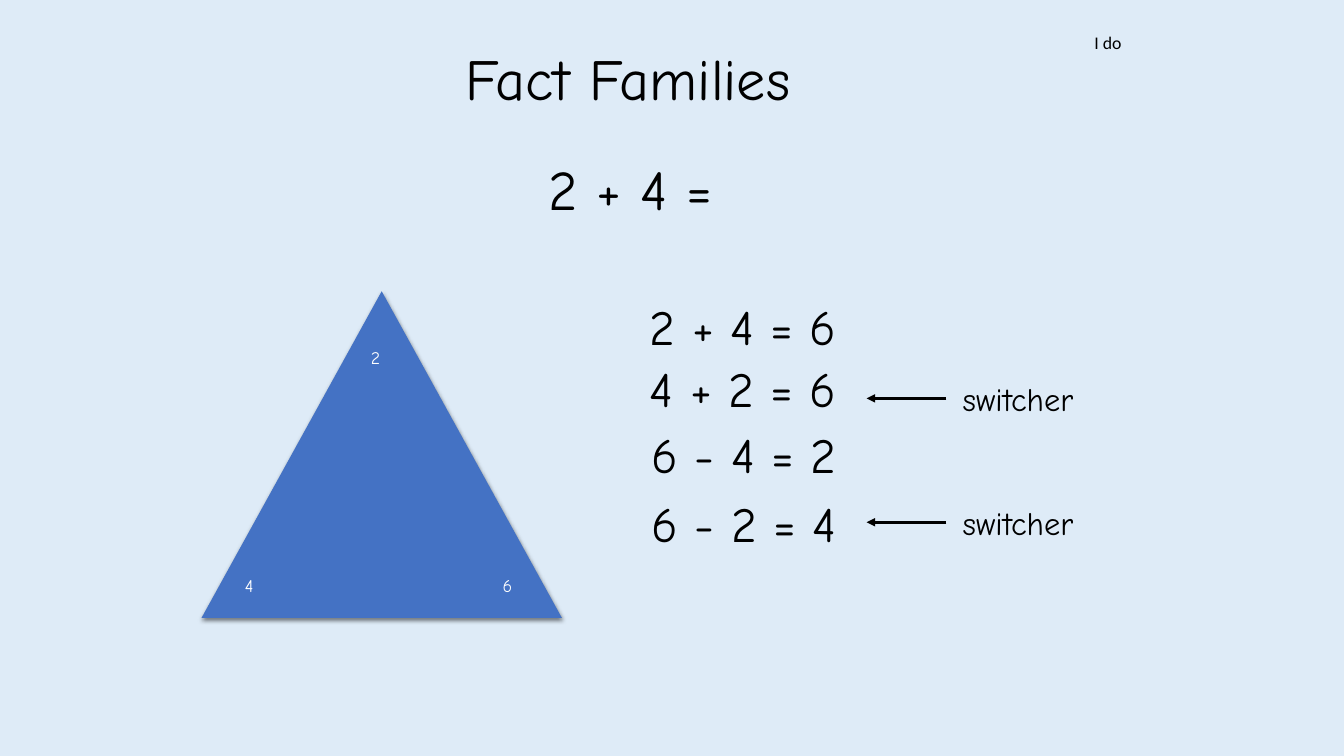
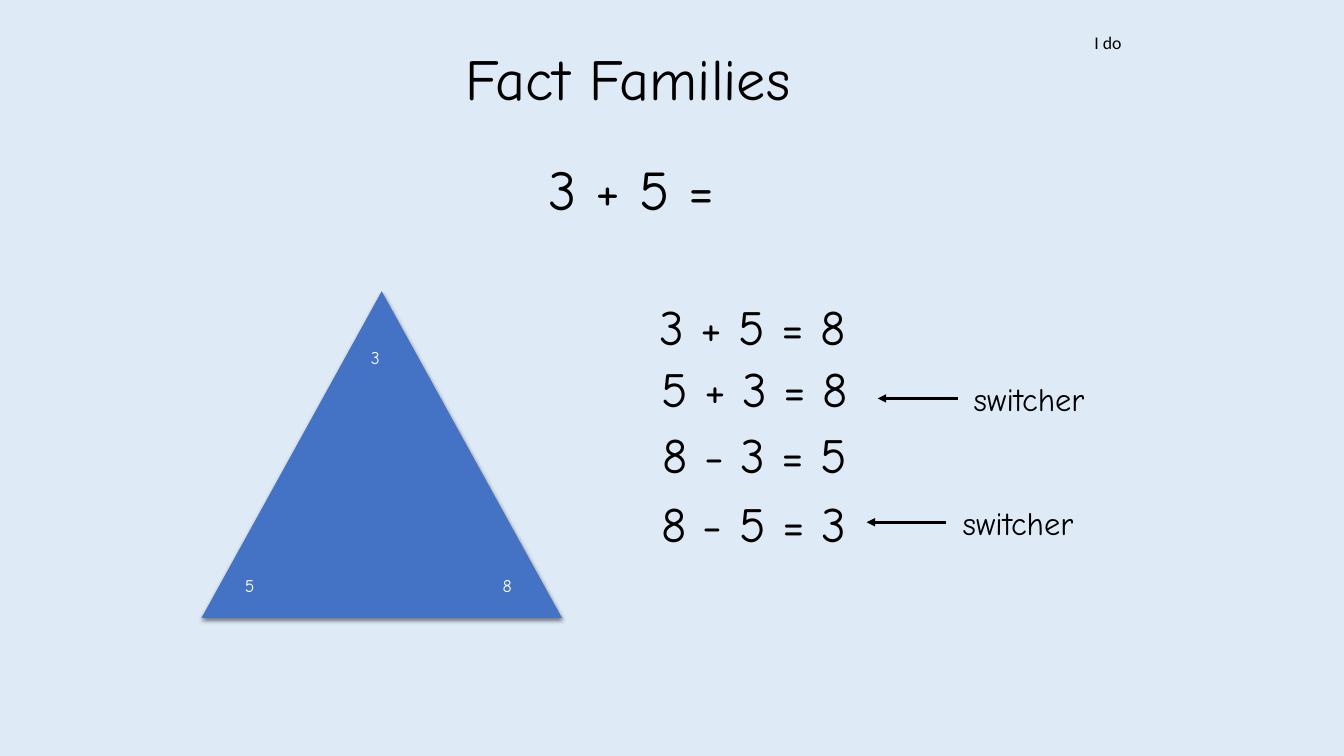
from pptx import Presentation
from pptx.dml.color import RGBColor
from pptx.enum.shapes import MSO_CONNECTOR, MSO_SHAPE
from pptx.enum.text import MSO_ANCHOR
from pptx.oxml import parse_xml
from pptx.oxml.ns import nsdecls, qn
from pptx.util import Cm, Pt

# Shared look
SKY, BLUE, BLACK, WHITE = "DEEBF7", "4472C4", "000000", "FFFFFF"
HAND, PLAIN = "Comic Neue", "Calibri"
TITLE = {"size": 41.5}
SUM = {"size": 40.1}
EQUATION = {"size": 35.2}
LABEL = {"size": 23.2}
CORNER = {"size": 12.7, "color": WHITE}
CUE = {"size": 12.7, "name": PLAIN}

# Shared places, in cm
CORNER_SPOTS = [(9.25, 8.64), (6.07, 14.38), (12.57, 14.38)]
EQUATION_TOPS = [7.37, 8.92, 10.58, 12.32]
SWITCHER_TOPS = [9.45, 12.57]
SWITCHER_LEFT = 21.84

# Corners run top, left, right; each equation has its left edge
FAMILIES = [
    {"sum": "2 + 4 =", "corners": "246", "shifts": [0, 0],
     "equations": [("2 + 4 = 6", 16.28), ("4 + 2 = 6", 16.28),
                   ("6 - 4 = 2", 16.33), ("6 - 2 = 4", 16.33)]},
    {"sum": "3 + 5 =", "corners": "358", "shifts": [0.28, 0],
     "equations": [("3 + 5 = 8", 16.51), ("5 + 3 = 8", 16.56),
                   ("8 - 3 = 5", 16.59), ("8 - 5 = 3", 16.56)]},
]


def rgb(value):
    return RGBColor.from_string(value)


def add_text(page, text, left, top, width, height, style):
    box = page.shapes.add_textbox(Cm(left), Cm(top), Cm(width), Cm(height))
    frame = box.text_frame
    settings = {"word_wrap": True, "vertical_anchor": MSO_ANCHOR.MIDDLE}
    for side in ("left", "top", "right", "bottom"):
        settings[f"margin_{side}"] = Cm(0.1)
    for name, value in settings.items():
        setattr(frame, name, value)
    span = frame.paragraphs[0].add_run()
    span.text = text
    look = {"name": HAND, "color": BLACK} | style
    span.font.color.rgb = rgb(look.pop("color"))
    look["size"] = Pt(look["size"])
    for name, value in look.items():
        setattr(span.font, name, value)


def add_triangle(page, left, top, width, height):
    triangle = page.shapes.add_shape(MSO_SHAPE.ISOSCELES_TRIANGLE,
                                     Cm(left), Cm(top), Cm(width), Cm(height))
    triangle.fill.solid()
    triangle.fill.fore_color.rgb = rgb(BLUE)
    triangle.line.fill.background()
    # Soft shadow straight below
    triangle.shadow.inherit = False
    effects = triangle.element.spPr.find(qn("a:effectLst"))
    effects.append(parse_xml(
        f'<a:outerShdw {nsdecls("a")} blurRad="{Pt(3)}" dist="{Pt(2)}" '
        f'dir="5400000" rotWithShape="0"><a:srgbClr val="{BLACK}">'
        '<a:alpha val="51000"/></a:srgbClr></a:outerShdw>'))


def add_arrow(page, start, end, height):
    arrow = page.shapes.add_connector(MSO_CONNECTOR.STRAIGHT, Cm(start),
                                      Cm(height), Cm(end), Cm(height))
    arrow.line.color.rgb = rgb(BLACK)
    arrow.line.width = Pt(2)
    properties = arrow.element.spPr
    properties.find(qn("a:ln")).append(
        parse_xml(f'<a:tailEnd {nsdecls("a")} type="triangle"/>'))
    properties.append(parse_xml(f'<a:effectLst {nsdecls("a")}/>'))


def add_switcher(page, left, top):
    add_arrow(page, left + 2.01, left, top + 0.59)
    add_text(page, "switcher", left + 2.32, top, 3.53, 1.19, LABEL)


def add_family(deck, family):
    page = deck.slides.add_slide(deck.slide_layouts[6])
    # Heading
    add_text(page, "Fact Families", 11.63, 0.97, 9.32, 1.98, TITLE)
    add_text(page, "I do", 27.48, 0.69, 0.99, 0.74, CUE)
    add_text(page, family["sum"], 13.72, 3.78, 5.08, 1.91, SUM)
    # Number triangle
    add_triangle(page, 5.08, 7.34, 9.08, 8.23)
    for number, (left, top) in zip(family["corners"], CORNER_SPOTS):
        add_text(page, number, left, top, 0.48, 0.74, CORNER)
    # Equations and their switchers
    for (text, left), top in zip(family["equations"], EQUATION_TOPS):
        add_text(page, text, left, top, 5.23, 1.7, EQUATION)
    for shift, top in zip(family["shifts"], SWITCHER_TOPS):
        add_switcher(page, SWITCHER_LEFT + shift, top)


def main():
    deck = Presentation()
    deck.slide_width, deck.slide_height = Cm(33.87), Cm(19.05)
    background = deck.slide_master.background.fill
    background.solid()
    background.fore_color.rgb = rgb(SKY)
    for family in FAMILIES:
        add_family(deck, family)
    deck.save("out.pptx")


if __name__ == "__main__":
    main()
